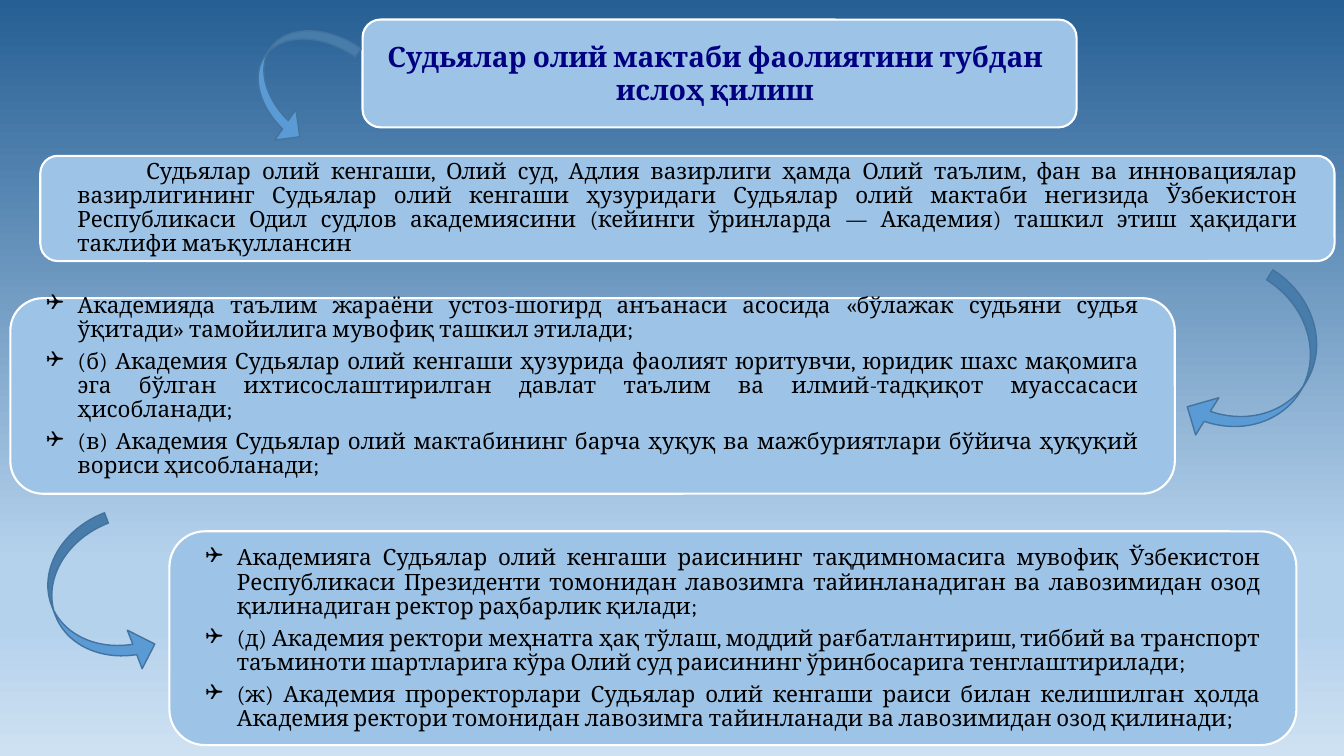
from lxml import etree
from pptx import Presentation
from pptx.dml.color import RGBColor
from pptx.enum.shapes import MSO_SHAPE as Shp
from pptx.enum.text import MSO_ANCHOR as Anchor, MSO_AUTO_SIZE as Auto, PP_ALIGN as Align
from pptx.oxml.ns import qn
from pptx.util import Pt


def color(hexa):
    return RGBColor.from_string(hexa)


class Deck:
    font = "Cambria"
    panel_fill, panel_line = "9DC3E6", "FFFFFF"
    arrow_fill, arrow_line = "5B9BD5", "43739E"

    def __init__(self, width, height):
        self.prs = Presentation()
        self.prs.slide_width, self.prs.slide_height = Pt(width), Pt(height)
        self.slide = self.prs.slides.add_slide(self.prs.slide_layouts[3])
        self.shapes = self.slide.shapes

    def backdrop(self, stops):
        fill = self.slide.background.fill
        fill.gradient()
        fill.gradient_angle = 270
        ramp = next(self.slide.element.iter(qn("a:gsLst")))
        for old in list(ramp):
            ramp.remove(old)
        for pos, tone in stops:
            stop = etree.SubElement(ramp, qn("a:gs"), pos=str(pos * 1000))
            etree.SubElement(stop, qn("a:srgbClr"), val=tone)

    def shape(self, kind, box, fill, line, weight):
        shape = self.shapes.add_shape(kind, *map(Pt, box))
        shape.shadow.inherit = False
        shape.fill.solid()
        shape.fill.fore_color.rgb = color(fill)
        shape.line.color.rgb = color(line)
        shape.line.width = Pt(weight)
        return shape

    def panel(self, box):
        self.shape(Shp.ROUNDED_RECTANGLE, box, self.panel_fill, self.panel_line, 1.5)

    def arrow(self, box, turn, flip=False):
        arrow = self.shape(Shp.CURVED_RIGHT_ARROW, box, self.arrow_fill, self.arrow_line, 1)
        for i, value in enumerate((0.134, 0.5, 0.25)):
            arrow.adjustments[i] = value
        arrow.rotation = turn
        if flip:
            arrow.element.spPr.find(qn("a:xfrm")).set("flipH", "1")

    def text(self, box, holder, paras, size=16, tone="000000", bold=False,
             align=Align.JUSTIFY, lines=0.9, after=5.6, left=0, first=0, bullet=None):
        # Placeholders come first in the slide, so lift each above its panel
        self.shapes.element.append(holder.element)
        holder.left, holder.top, holder.width, holder.height = map(Pt, box)
        frame = holder.text_frame
        frame.word_wrap, frame.auto_size = True, Auto.NONE
        frame.vertical_anchor = Anchor.MIDDLE
        frame.margin_left = frame.margin_right = Pt(20)
        frame.margin_top = frame.margin_bottom = 0
        for i, words in enumerate(paras):
            para = frame.add_paragraph() if i else frame.paragraphs[0]
            para.text = words
            para.alignment, para.line_spacing = align, lines
            para.space_before, para.space_after = Pt(0), Pt(after)
            props = para._p.get_or_add_pPr()
            props.set("marL", str(Pt(left)))
            props.set("indent", str(Pt(first)))
            if bullet:
                etree.SubElement(props, qn("a:buFont"), typeface="Wingdings")
                etree.SubElement(props, qn("a:buChar"), char=bullet)
            font = para.font
            font.name, font.size, font.bold = self.font, Pt(size), bold
            font.color.rgb = color(tone)

    def title(self, box, words):
        self.text(box, self.shapes.title, [words], size=20, tone="000080", bold=True,
                  align=Align.CENTER, lines=1, after=0)

    def note(self, box, words):
        holder = self.shapes.add_textbox(*map(Pt, box))
        self.text(box, holder, [words], first=49)

    def bullets(self, box, index, items):
        self.text(box, self.slide.placeholders[index], items,
                  left=22.5, first=-22.5, bullet="❑")


def main():
    deck = Deck(960, 540)
    deck.backdrop([(0, "265F94"), (74, "B5D2EC"), (83, "B5D2EC"), (100, "CEE1F2")])

    # Title
    deck.panel((259, 14, 510, 77))
    deck.title((253, 20, 515.5, 64), "Судьялар олий мактаби фаолиятини тубдан ислоҳ қилиш")

    # Proposal
    deck.panel((28.8, 111.3, 924.5, 75.2))
    deck.note((35.3, 112.3, 912.2, 72.7),
              "Судьялар олий кенгаши, Олий суд, Адлия вазирлиги ҳамда Олий таълим, фан ва "
              "инновациялар вазирлигининг Судьялар олий кенгаши ҳузуридаги Судьялар олий мактаби "
              "негизида Ўзбекистон Республикаси Одил судлов академиясини (кейинги ўринларда — "
              "Академия) ташкил этиш ҳақидаги таклифи маъқуллансин")

    # Status of the academy
    deck.panel((7.4, 213, 831.8, 139.7))
    deck.bullets((13, 213, 820.8, 126), 1, [
        "Академияда таълим жараёни устоз-шогирд анъанаси асосида «бўлажак судьяни судья "
        "ўқитади» тамойилига мувофиқ ташкил этилади;",
        "(б) Академия Судьялар олий кенгаши ҳузурида фаолият юритувчи, юридик шахс мақомига "
        "эга бўлган ихтисослаштирилган давлат таълим ва илмий-тадқиқот муассасаси ҳисобланади;",
        "(в) Академия Судьялар олий мактабининг барча ҳуқуқ ва мажбуриятлари бўйича ҳуқуқий "
        "вориси ҳисобланади;",
    ])

    # Leadership
    deck.panel((121, 379.5, 805, 152.7))
    deck.bullets((126.7, 387.4, 794.2, 138.2), 2, [
        "Академияга Судьялар олий кенгаши раисининг тақдимномасига мувофиқ Ўзбекистон "
        "Республикаси Президенти томонидан лавозимга тайинланадиган ва лавозимидан озод "
        "қилинадиган ректор раҳбарлик қилади;",
        "(д) Академия ректори меҳнатга ҳақ тўлаш, моддий рағбатлантириш, тиббий ва транспорт "
        "таъминоти шартларига кўра Олий суд раисининг ўринбосарига тенглаштирилади;",
        "(ж) Академия проректорлари Судьялар олий кенгаши раиси билан келишилган ҳолда "
        "Академия ректори томонидан лавозимга тайинланади ва лавозимидан озод қилинади;",
    ])

    # Arrows from panel to panel
    deck.arrow((183.6, 11.5, 53.3, 90), 34.7)
    deck.arrow((869.8, 199.4, 62.6, 131), 32, flip=True)
    deck.arrow((38.2, 373, 59, 115.2), 339)

    deck.prs.save("out.pptx")


if __name__ == "__main__":
    main()
